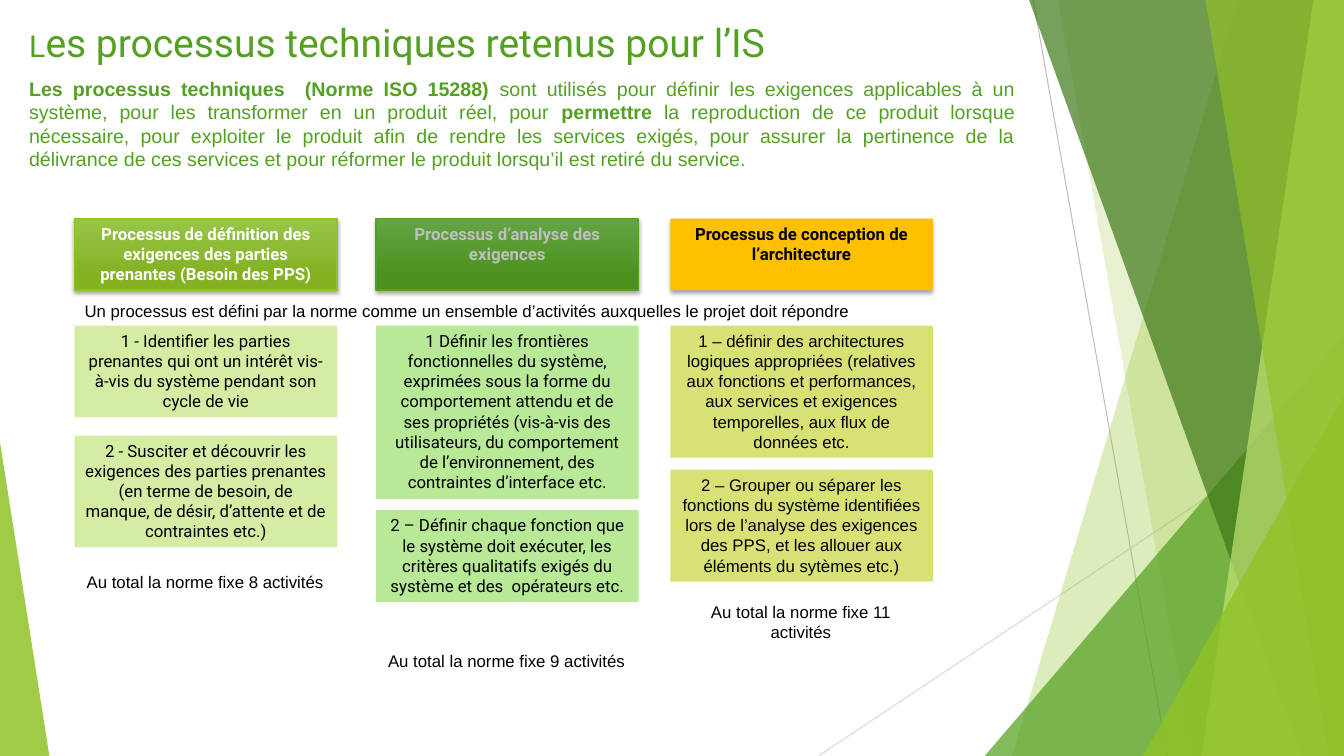
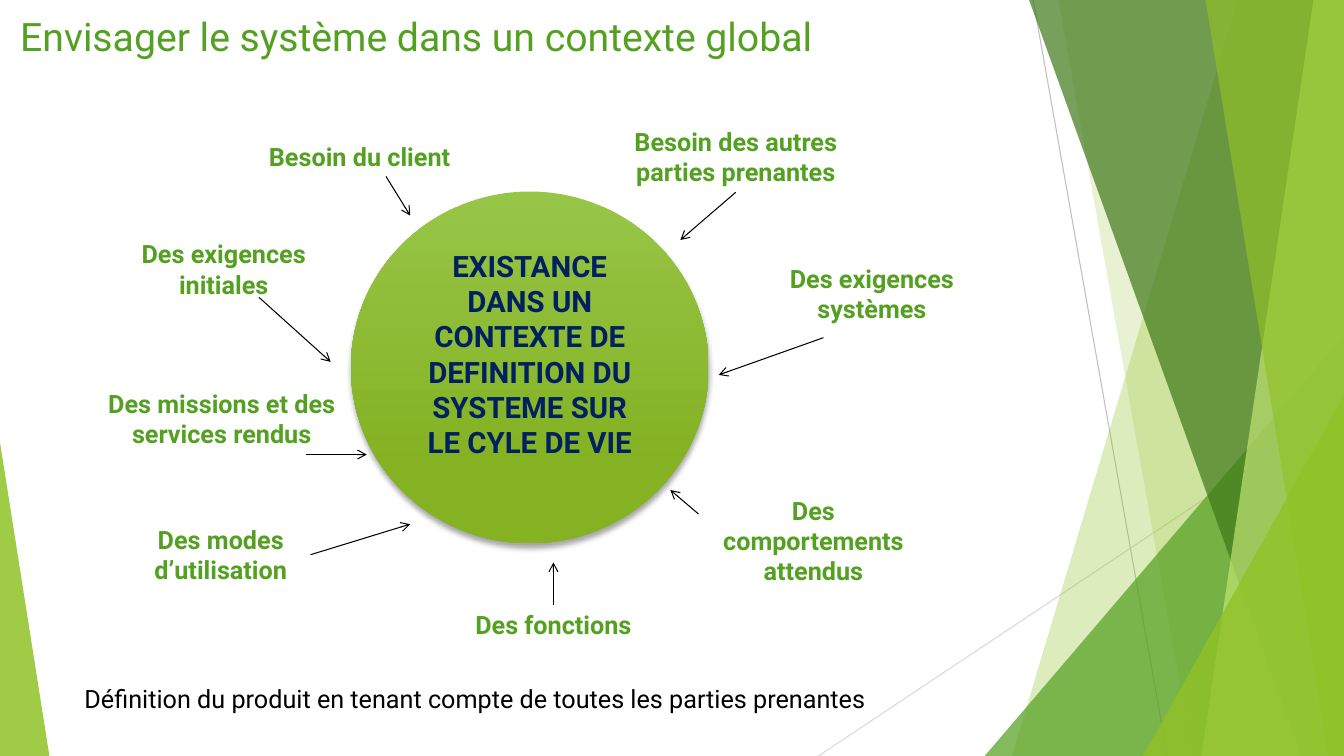
import pptx
import pptx.util
import pptx.dml.color
import pptx.enum.dml
import pptx.enum.shapes
import pptx.enum.text
import pptx.oxml.ns
import lxml.etree

Pt = pptx.util.Pt
RGB = pptx.dml.color.RGBColor
SHAPE = pptx.enum.shapes.MSO_SHAPE
ALIGN = pptx.enum.text.PP_ALIGN
qn = pptx.oxml.ns.qn

WHITE = RGB(0xFF, 0xFF, 0xFF)
BLACK = RGB(0x00, 0x00, 0x00)
NAVY = RGB(0x00, 0x20, 0x60)
GREEN = RGB(0x54, 0xA0, 0x21)
LIME = RGB(0x90, 0xC2, 0x26)
FOREST = RGB(0x3F, 0x78, 0x19)
PALE_LIME = RGB(0xC0, 0xE4, 0x74)
GREY = RGB(0xBF, 0xBF, 0xBF)
LIGHT_GREY = RGB(0xD9, 0xD9, 0xD9)
AMBER = RGB(0xFF, 0xC0, 0x00)
LIME_CARD = RGB(0xD5, 0xED, 0xA2)
GREEN_CARD = RGB(0xB7, 0xE9, 0x96)
OLIVE_CARD = RGB(0xD8, 0xE2, 0x74)
LIME_GRADIENT = (RGB(0x97, 0xC5, 0x47), RGB(0x84, 0xB2, 0x23))
GREEN_GRADIENT = (RGB(0x63, 0xA5, 0x45), RGB(0x4D, 0x92, 0x1E))

WIDTH, HEIGHT = 960, 540
TOP, LEFT, BOTTOM, RIGHT = range(4)  # connection sites of a rectangle


class Deck:
    """Holds the style and the current slide."""

    def __init__(self):
        self.prs = pptx.Presentation()
        self.prs.slide_width, self.prs.slide_height = Pt(WIDTH), Pt(HEIGHT)
        self.layout = self.prs.slide_layouts.get_by_name("Title Only")
        for holder in list(self.layout.placeholders):
            if holder.placeholder_format.type != pptx.enum.shapes.PP_PLACEHOLDER.TITLE:
                holder.element.getparent().remove(holder.element)
        self.slide = None

    def new_slide(self, title, box):
        self.slide = self.prs.slides.add_slide(self.layout)
        if len(self.prs.slides) == 1:
            self.decorate_layout()
        heading = self.slide.shapes.title
        heading.left, heading.top, heading.width, heading.height = map(Pt, box)
        heading.fill.solid()
        heading.fill.fore_color.rgb = WHITE
        self.fill_text(heading, title, 28, GREEN, align=ALIGN.LEFT)

    def fill_text(self, shape, content, size, color, font="Roboto", bold=False,
                  align=ALIGN.CENTER):
        """Content is a string, or a list of (text, size, bold) runs."""
        frame = shape.text_frame
        frame.word_wrap = True
        frame.auto_size = pptx.enum.text.MSO_AUTO_SIZE.NONE
        frame.vertical_anchor = pptx.enum.text.MSO_ANCHOR.TOP
        if isinstance(content, str):
            frame.text = content
        else:
            for text, run_size, run_bold in content:
                run = frame.paragraphs[0].add_run()
                run.text = text
                run.font.size, run.font.bold = Pt(run_size), run_bold
        for paragraph in frame.paragraphs:
            paragraph.alignment = align
            for run in paragraph.runs:
                if isinstance(content, str):
                    run.font.size, run.font.bold = Pt(size), bold
                run.font.name = font
                run.font.color.rgb = color

    def text(self, box, content, size, color, **style):
        label = self.slide.shapes.add_textbox(*map(Pt, box))
        self.fill_text(label, content, size, color, **style)
        return label

    def paint(self, shape, fill, alpha=None, outline=None):
        """Fill is a colour, or a pair of colours for a vertical gradient."""
        shape.shadow.inherit = False
        if isinstance(fill, RGB):
            shape.fill.solid()
            shape.fill.fore_color.rgb = fill
        else:
            shape.fill.gradient()
            shape.fill.gradient_angle = 270
            for stop, color, position in zip(shape.fill.gradient_stops, fill, (0, 0.78)):
                stop.color.rgb = color
                stop.position = position
        if alpha:
            color = shape.element.spPr.find(qn("a:solidFill"))[0]
            lxml.etree.SubElement(color, qn("a:alpha"), val=str(alpha * 1000))
        if outline:
            shape.line.color.rgb = outline
            shape.line.width = Pt(1)
        else:
            shape.line.fill.background()
        return shape

    def shape(self, kind, box, fill, alpha=None, outline=None):
        shape = self.slide.shapes.add_shape(kind, *map(Pt, box))
        return self.paint(shape, fill, alpha, outline)

    def triangle(self, box, fill, alpha, apex):
        self.shape(SHAPE.ISOSCELES_TRIANGLE, box, fill, alpha).adjustments[0] = apex

    def ribbon(self, top_x, bottom_x, fill, alpha):
        """Band from a slanted left edge to the right side of the slide."""
        outline = self.slide.shapes.build_freeform(Pt(top_x), 0)
        corners = ((WIDTH, 0), (WIDTH, HEIGHT), (bottom_x, HEIGHT))
        outline.add_line_segments([(Pt(x), Pt(y)) for x, y in corners])
        self.paint(outline.convert_to_shape(), fill, alpha)

    def drop_shadow(self, shape, blur, distance):
        effects = shape.element.spPr.find(qn("a:effectLst"))
        shadow = lxml.etree.SubElement(
            effects, qn("a:outerShdw"), blurRad=str(Pt(blur)), dist=str(Pt(distance)),
            dir="5400000", rotWithShape="0")
        color = lxml.etree.SubElement(shadow, qn("a:srgbClr"), val=str(BLACK))
        lxml.etree.SubElement(color, qn("a:alpha"), val="35000")

    def line(self, start, end, color, arrow=False):
        line = self.slide.shapes.add_connector(
            pptx.enum.shapes.MSO_CONNECTOR.STRAIGHT, *map(Pt, (*start, *end)))
        line.line.color.rgb = color
        line.line.width = Pt(0.75)
        properties = line.element.spPr
        if arrow:
            lxml.etree.SubElement(properties.find(qn("a:ln")), qn("a:tailEnd"), type="arrow")
        lxml.etree.SubElement(properties, qn("a:effectLst"))
        return line

    def decorate_layout(self):
        """Draw the green facets, then move them to the shared layout."""
        self.line((738, 0), (833.8, HEIGHT), GREY)
        self.line((WIDTH, 290), (584.6, HEIGHT), LIGHT_GREY)
        self.ribbon(884.2, 722.9, LIME, 30)
        self.ribbon(756, 851.8, LIME, 20)
        self.triangle((703.4, 239.8, 256.6, 300.2), GREEN, 72, 1)
        self.ribbon(735.1, 929.5, FOREST, 70)
        self.ribbon(938.2, 858.2, PALE_LIME, 70)
        self.ribbon(861.1, 949, LIME, 65)
        self.triangle((816.5, 283, 143.5, 257), LIME, 80, 1)
        self.triangle((0, 316, 35.3, 224), LIME, 85, 0)
        for facet in list(self.slide.shapes):
            if not facet.is_placeholder:
                self.layout.shapes.element.append(facet.element)


def technical_processes(deck):
    deck.new_slide([("L", 21.6, False),
                    ("es processus techniques retenus pour l’IS", 27.9, False)],
                   (13.7, 9.4, 704, 34.6))
    deck.text((13.7, 51.1, 718.6, 75), [
        ("Les processus techniques  (Norme ISO 15288) ", 14, True),
        ("sont utilisés pour définir les exigences applicables à un système, pour les "
         "transformer en un produit réel, pour ", 14, False),
        ("permettre", 14, True),
        (" la reproduction de ce produit lorsque nécessaire, pour exploiter le produit "
         "afin de rendre les services exigés, pour assurer la pertinence de la délivrance "
         "de ces services et pour réformer le produit lorsqu’il est retiré du service.",
         14, False)], 14, GREEN, font="Arial", align=ALIGN.JUSTIFY)
    deck.text((53.3, 211, 612.7, 21.6),
              "Un processus est défini par la norme comme un ensemble d’activités "
              "auxquelles le projet doit répondre",
              12, BLACK, font="Arial", align=ALIGN.LEFT)

    # Columns: left, header (text, fill, outline, colour), cards (fill, font, gap,
    # (height, text) pairs), total (top, text)
    columns = [
        (53.3,
         ("Processus de définition des exigences des parties prenantes (Besoin des PPS)",
          LIME_GRADIENT, LIME, WHITE),
         (LIME_CARD, "Roboto", 13, [
             (65.5, "1 - Identifier les parties prenantes qui ont un intérêt vis-à-vis du "
                    "système pendant son cycle de vie"),
             (80, "2 - Susciter et découvrir les exigences des parties prenantes\n"
                  "(en terme de besoin, de manque, de désir, d’attente et de "
                  "contraintes etc.)")]),
         (404.6, "Au total la norme fixe 8 activités")),
        (268.6,
         ("Processus d’analyse des exigences", GREEN_GRADIENT, GREEN, GREY),
         (GREEN_CARD, "Roboto", 8, [
             (123.8, "1 Définir les frontières fonctionnelles du système, exprimées sous la "
                     "forme du comportement attendu et de ses propriétés (vis-à-vis des "
                     "utilisateurs, du comportement de l’environnement, des contraintes "
                     "d’interface etc."),
             (65.5, "2 – Définir chaque fonction que le système doit exécuter, les critères "
                    "qualitatifs exigés du système et des  opérateurs etc.")]),
         (461.5, "Au total la norme fixe 9 activités")),
        (478.8,
         ("Processus de conception de l’architecture", AMBER, None, BLACK),
         (OLIVE_CARD, "Arial", 8.5, [
             (94.4, "1 – définir des architectures logiques appropriées (relatives aux "
                    "fonctions et performances, aux services et exigences temporelles, aux "
                    "flux de données etc."),
             (80, "2 – Grouper ou séparer les fonctions du système identifiées lors de "
                  "l’analyse des exigences des PPS, et les allouer aux éléments du "
                  "sytèmes etc.)")]),
         (426.2, "Au total la norme fixe 11 activités")),
    ]
    column_width = 187.5
    for left, header, (card_fill, font, gap, cards), (total_top, total) in columns:
        name, fill, outline, color = header
        process = deck.shape(SHAPE.RECTANGLE, (left, 156.2, column_width, 51.1), fill,
                             outline=outline)
        deck.drop_shadow(process, 3, 2)
        deck.fill_text(process, name, 12, color, bold=True)
        top = 232.6
        for height, activity in cards:
            card = deck.shape(SHAPE.RECTANGLE, (left, top, column_width, height), card_fill)
            deck.fill_text(card, activity, 12, BLACK, font=font)
            top += height + gap
        deck.text((left - 0.7, total_top, 188, 36.7), total, 12, BLACK, font="Arial")


def global_context(deck):
    deck.new_slide("Envisager le système dans un contexte global", (7.2, 5, 589.7, 34.6))
    context = deck.shape(SHAPE.OVAL, (250.6, 136.8, 255.6, 251.3), LIME_GRADIENT)
    deck.drop_shadow(context, 4, 3)
    deck.fill_text(context,
                   "EXISTANCE DANS UN CONTEXTE DE DEFINITION DU SYSTEME SUR LE CYLE DE VIE",
                   21, NAVY, bold=True)

    # Inputs: text, box, arrow start, arrow end, joined side of the box
    inputs = [
        ("Besoin du client", (185, 97.2, 181.4, 28.8), (275.8, 126), (293, 154), BOTTOM),
        ("Besoin des autres parties prenantes", (434.9, 86.4, 181.4, 50.9),
         (525.6, 137), (486, 171.4), BOTTOM),
        ("Des missions et des services rendus", (67.7, 273.6, 181.4, 50.9),
         (218.9, 324.7), (262, 324.7), None),
        ("Des exigences initiales", (69.1, 167, 181.4, 50.9),
         (185, 212.4), (236.2, 258.5), None),
        ("Des exigences systèmes", (532.1, 184.3, 181.4, 50.9),
         (588.2, 241.2), (513.4, 267.8), None),
        ("Des modes d’utilisation", (93.6, 370.8, 128.2, 50.9),
         (222, 396.3), (293, 374.4), RIGHT),
        ("Des comportements attendus", (503.3, 350, 155.5, 72.7),
         (499, 367.2), (478.8, 350), None),
        ("Des fonctions", (304.6, 432, 181.4, 28.8), (395.3, 432), (395.3, 401.8), TOP),
    ]
    for name, box, start, end, side in inputs:
        align = ALIGN.LEFT if name == "Besoin du client" else ALIGN.CENTER
        need = deck.text(box, name, 18, GREEN, bold=True, align=align)
        arrow = deck.line(start, end, BLACK, arrow=True)
        if side is not None:
            arrow.begin_connect(need, side)

    # Conclusion
    deck.text((53.3, 484.6, 594.7, 28.8),
              "Définition du produit en tenant compte de toutes les parties prenantes",
              18, BLACK, align=ALIGN.LEFT)


def main():
    deck = Deck()
    technical_processes(deck)
    global_context(deck)
    deck.prs.save("out.pptx")


if __name__ == "__main__":
    main()
